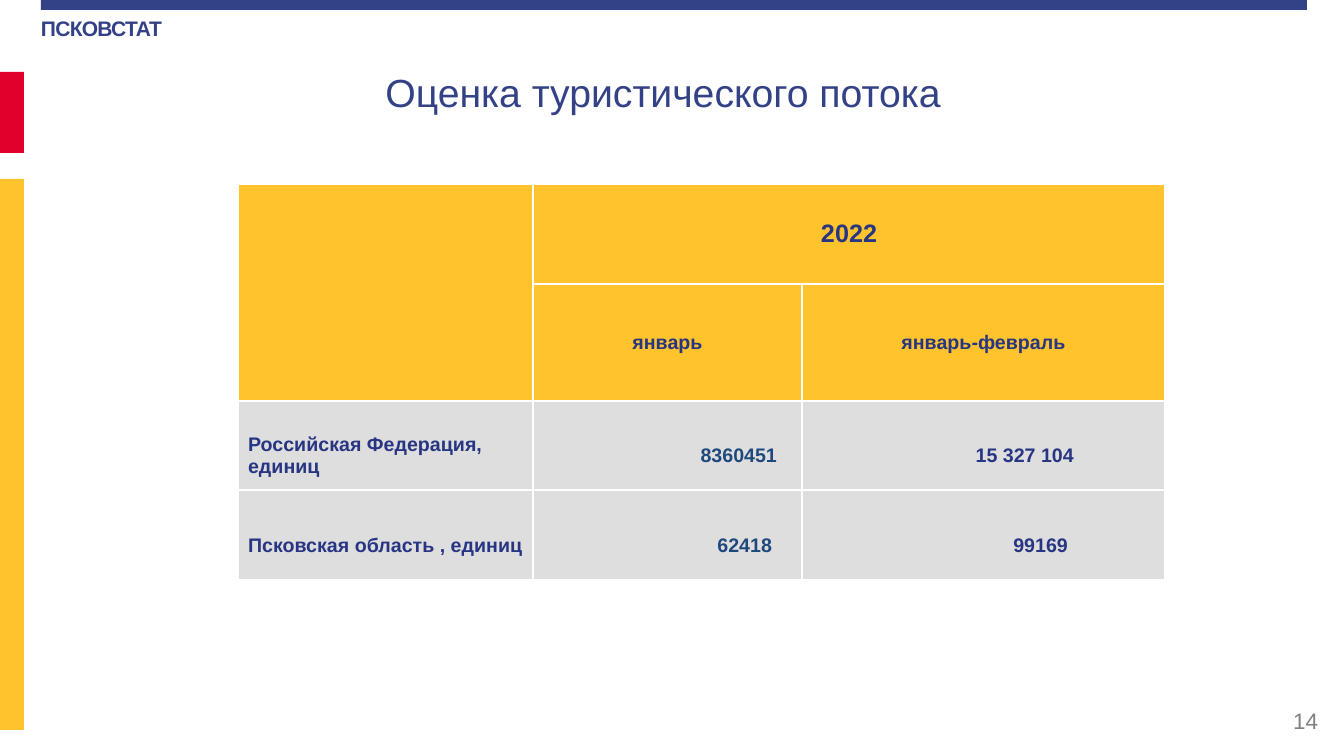
from lxml import etree
from pptx import Presentation
from pptx.dml.color import RGBColor
from pptx.enum.shapes import MSO_SHAPE
from pptx.enum.text import MSO_ANCHOR, PP_ALIGN
from pptx.oxml.ns import qn
from pptx.util import Emu, Pt

PX = 914400 / 100.8
FONT = "Arial"
LEFT, CENTER, RIGHT = PP_ALIGN.LEFT, PP_ALIGN.CENTER, PP_ALIGN.RIGHT
TOP, MIDDLE = MSO_ANCHOR.TOP, MSO_ANCHOR.MIDDLE
RECTANGLE = MSO_SHAPE.RECTANGLE

COLORS = {
    "blue": "334286",
    "red": "E1002B",
    "yellow": "FFC32E",
    "header": "FFC32D",
    "body": "DEDEDE",
    "navy": "283583",
    "steel": "1F497D",
    "gray": "808080",
    "white": "FFFFFF",
}

COLUMN_WIDTHS = [295, 269, 363]
ROW_HEIGHTS = [100, 117, 89, 90]
# Region, then each value with its right margin and colour
REGIONS = [
    ("Российская Федерация, единиц", [("8360451", 25, "steel"), ("15 327 104", 91, "navy")]),
    ("Псковская область , единиц", [("62418", 30, "steel"), ("99169", 97, "navy")]),
]


def px(length):
    return Emu(round(length * PX))


def color(name):
    return RGBColor.from_string(COLORS[name])


def add_run(para, text, size, color_name, bold=False):
    span = para.add_run()
    span.text = text
    span.font.name = FONT
    span.font.size = Pt(size)
    span.font.bold = bold
    span.font.color.rgb = color(color_name)
    return span


def add_bar(page, left, top, width, height, color_name):
    bar = page.shapes.add_shape(RECTANGLE, px(left), px(top), px(width), px(height))
    bar.shadow.inherit = False
    bar.fill.solid()
    bar.fill.fore_color.rgb = color(color_name)
    bar.line.fill.background()


def add_label(page, bounds, text, size, color_name, align, anchor=TOP, bold=False, inset=(10, 5)):
    box = page.shapes.add_textbox(*map(px, bounds))
    frame = box.text_frame
    frame.word_wrap = True
    frame.vertical_anchor = anchor
    frame.margin_left = frame.margin_right = px(inset[0])
    frame.margin_top = frame.margin_bottom = px(inset[1])
    para = frame.paragraphs[0]
    para.alignment = align
    return add_run(para, text, size, color_name, bold)


def style_cell(cell, fill_name):
    """Give the cell thin white borders, then its fill."""
    properties = cell._tc.get_or_add_tcPr()
    for side in ("a:lnL", "a:lnR", "a:lnT", "a:lnB"):
        line = etree.SubElement(properties, qn(side), w=str(Pt(1)))
        fill = etree.SubElement(line, qn("a:solidFill"))
        etree.SubElement(fill, qn("a:srgbClr"), val=COLORS["white"])
    cell.fill.solid()
    cell.fill.fore_color.rgb = color(fill_name)
    cell.vertical_anchor = MIDDLE


def fill_cell(cell, text, align, size=14, color_name="navy", right=10, top=5):
    cell.margin_right = px(right)
    cell.margin_top = px(top)
    para = cell.text_frame.paragraphs[0]
    para.alignment = align
    add_run(para, text, size, color_name, bold=True)


def add_flow_table(page):
    frame = page.shapes.add_table(
        len(ROW_HEIGHTS), len(COLUMN_WIDTHS), px(238), px(184),
        px(sum(COLUMN_WIDTHS)), px(sum(ROW_HEIGHTS)),
    )
    table = frame.table
    for column, width in zip(table.columns, COLUMN_WIDTHS):
        column.width = px(width)
    for index, (row, height) in enumerate(zip(table.rows, ROW_HEIGHTS)):
        row.height = px(height)
        for cell in row.cells:
            style_cell(cell, "header" if index < 2 else "body")

    table.cell(0, 0).merge(table.cell(1, 0))
    table.cell(0, 1).merge(table.cell(0, 2))
    fill_cell(table.cell(0, 1), "2022", CENTER, size=18)
    for column, period in enumerate(["январь", "январь-февраль"], start=1):
        fill_cell(table.cell(1, column), period, CENTER)

    for row, (region, values) in enumerate(REGIONS, start=2):
        fill_cell(table.cell(row, 0), region, LEFT, top=26)
        for column, (value, margin, color_name) in enumerate(values, start=1):
            fill_cell(table.cell(row, column), value, RIGHT,
                      color_name=color_name, right=margin, top=26)


def main():
    deck = Presentation()
    deck.slide_width, deck.slide_height = px(1344), px(756)
    page = deck.slides.add_slide(deck.slide_layouts[6])

    agency = add_label(page, (41, 16, 142, 27), "ПСКОВСТАТ", 15, "blue", LEFT,
                       bold=True, inset=(0, 0))
    agency._r.get_or_add_rPr().set("spc", "-50")
    add_bar(page, 41, 0, 1266, 10, "blue")
    add_bar(page, 0, 72, 24, 81, "red")
    add_bar(page, 0, 179, 24, 551, "yellow")
    add_label(page, (1026, 701, 302, 40), "14", 16, "gray", RIGHT, MIDDLE)
    add_label(page, (316, 63, 694, 85), "Оценка туристического потока", 28, "blue", CENTER)
    add_flow_table(page)

    deck.save("out.pptx")


if __name__ == "__main__":
    main()
